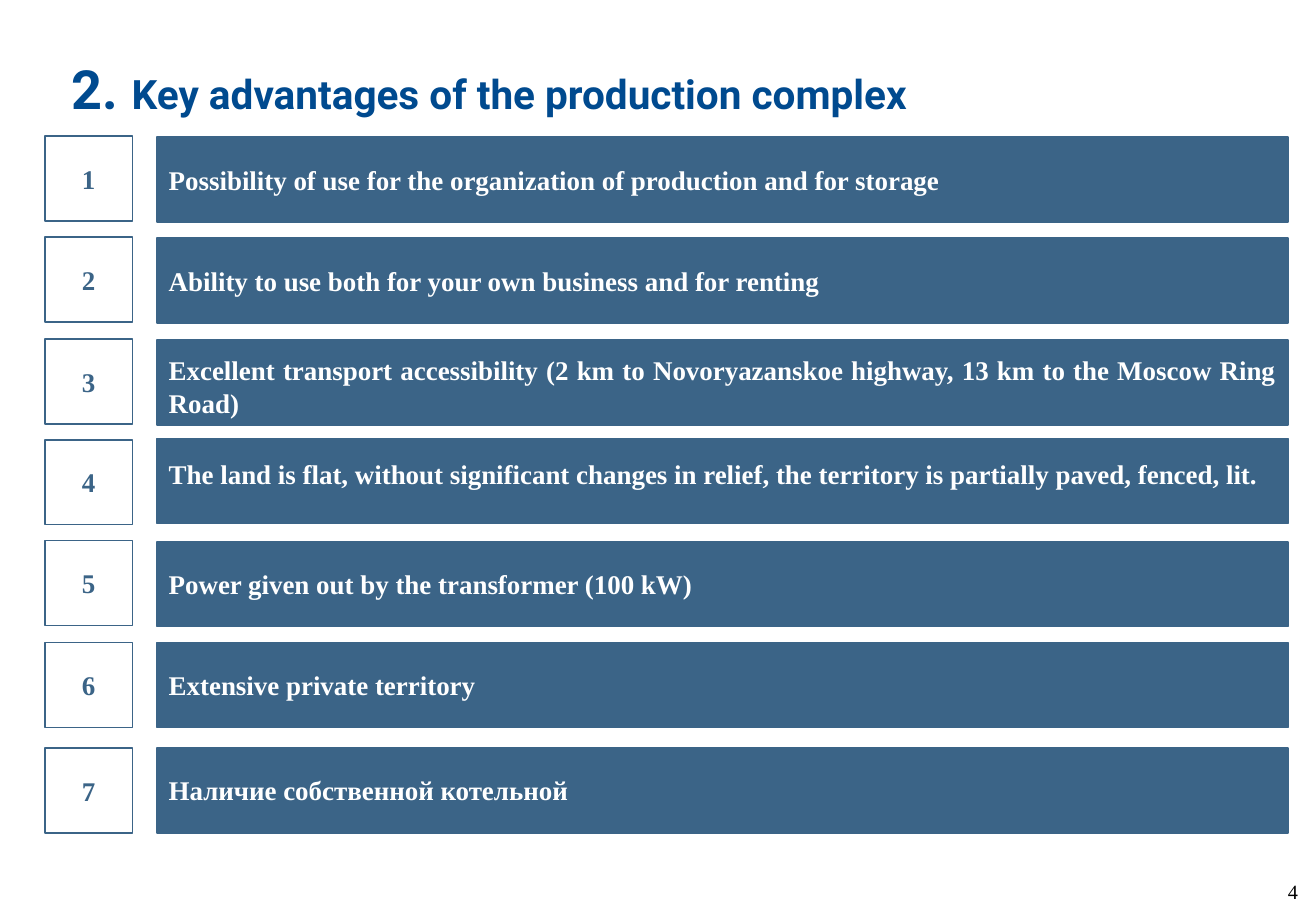
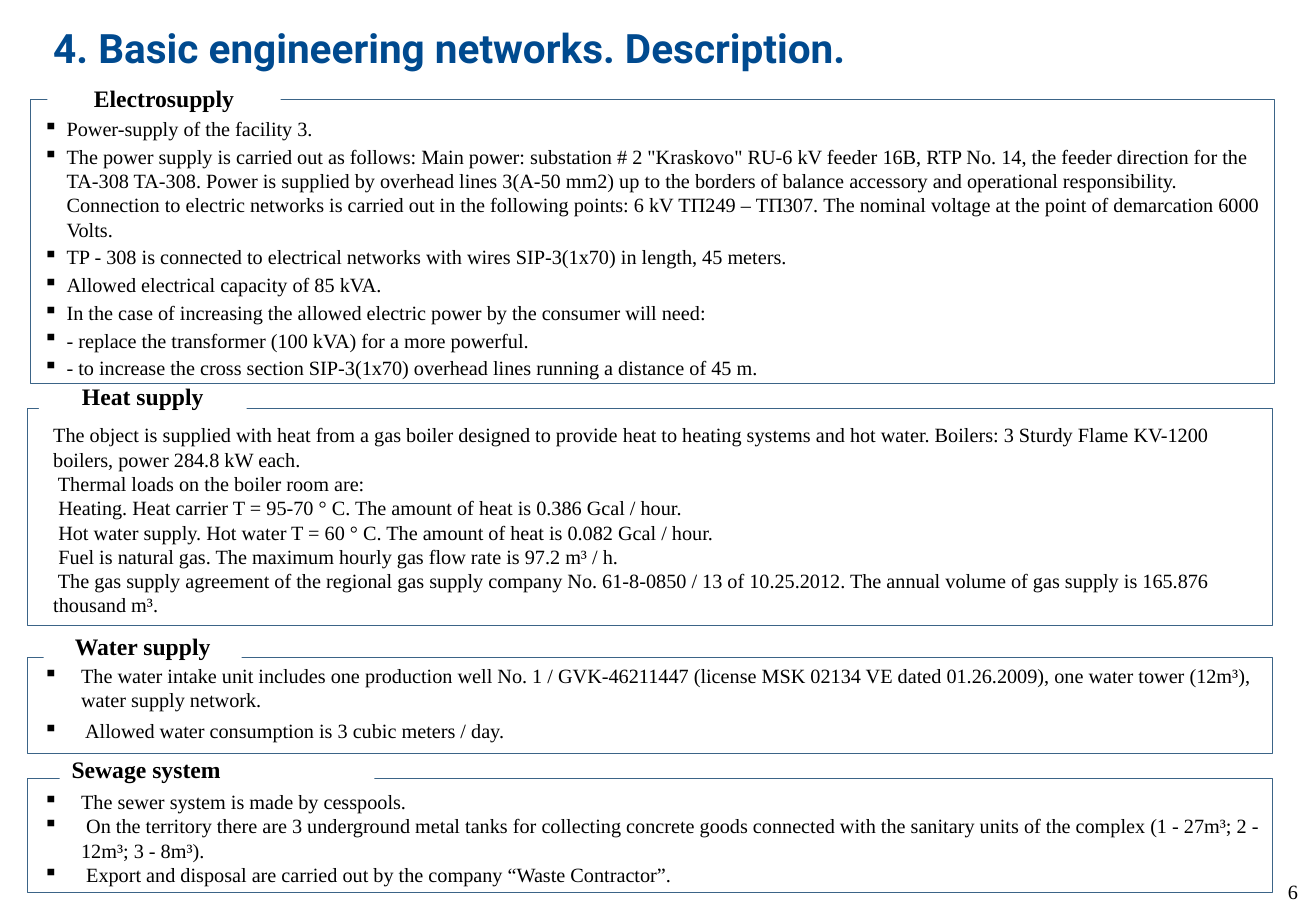
from dataclasses import dataclass

import pptx
import pptx.dml.color
import pptx.enum.shapes
import pptx.enum.text
import pptx.presentation
import pptx.shapes.autoshape
import pptx.slide
import pptx.text.text
import pptx.util
from lxml import etree
from pptx.oxml.ns import qn

EMU_PER_PX = 9144
STEEL = "3B6487"
NAVY = "004A8F"
WHITE = "FFFFFF"
BLACK = "000000"
SERIF = "Times New Roman"
SANS = "Roboto"
ALIGN = pptx.enum.text.PP_ALIGN
ANCHOR = pptx.enum.text.MSO_ANCHOR


@dataclass(frozen=True)
class Box:
    left: int
    top: int
    width: int
    height: int


@dataclass(frozen=True)
class TextStyle:
    size: int
    color: str = BLACK
    bold: bool = False
    align: ALIGN = ALIGN.LEFT
    name: str = SERIF


@dataclass(frozen=True)
class Advantage:
    text: str
    number_top: int
    bar_top: int
    text_shift: int = 0


@dataclass(frozen=True)
class Section:
    heading: str
    label: Box
    frame: Box
    body: Box
    paragraphs: tuple[str, ...]
    hanging: int = 0
    space_before: int = 0
    space_after: int = 0
    heading_align: ALIGN = ALIGN.CENTER


NUMBER_STYLE = TextStyle(16, STEEL, True, ALIGN.CENTER)
BAR_STYLE = TextStyle(16, WHITE, True, ALIGN.JUSTIFY)
BODY_STYLE = TextStyle(12)
PAGE_STYLE = TextStyle(12, align=ALIGN.RIGHT)

ADVANTAGES = (
    Advantage("Possibility of use for the organization of production and for storage", 112, 113),
    Advantage("Ability to use both for your own business and for renting", 195, 196),
    Advantage(
        "Excellent transport accessibility (2 km to Novoryazanskoe highway, 13 km to the Moscow Ring Road)",
        279, 280, 3,
    ),
    Advantage(
        "The land is flat, without significant changes in relief, the territory is partially paved, fenced, lit.",
        362, 361, -6,
    ),
    Advantage("Power given out by the transformer (100 kW)", 445, 446),
    Advantage("Extensive private territory", 529, 529),
    Advantage("Наличие собственной котельной", 616, 616, -1),
)

SECTIONS = (
    Section(
        "Electrosupply",
        Box(39, 64, 192, 34), Box(25, 82, 1024, 234), Box(26, 91, 1023, 229),
        (
            "Power-supply of the facility 3.",
            "The power supply is carried out as follows: Main power: substation # 2 \"Kraskovo\" RU-6 kV "
            "feeder 16B, RTP No. 14, the feeder direction for the TA-308 TA-308. Power is supplied by overhead "
            "lines 3(A-50 mm2) up to the borders of balance accessory and operational responsibility. "
            "Connection to electric networks is carried out in the following points: 6 kV ТП249 – ТП307. "
            "The nominal voltage at the point of demarcation 6000 Volts.",
            "TP - 308 is connected to electrical networks with wires SIP-3(1х70) in length, 45 meters.",
            "Allowed electrical capacity of 85 kVA.",
            "In the case of increasing the allowed electric power by the consumer will need:",
            "- replace the transformer (100 kVA) for a more powerful.",
            "- to increase the cross section SIP-3(1х70) overhead lines running a distance of 45 m.",
        ),
        hanging=19, space_before=2,
    ),
    Section(
        "Heat supply",
        Box(32, 309, 171, 34), Box(23, 336, 1024, 179), Box(34, 343, 1023, 172),
        (
            "The object is supplied with heat from a gas boiler designed to provide heat to heating systems "
            "and hot water. Boilers: 3 Sturdy Flame KV-1200 boilers, power 284.8 kW each.",
            " Thermal loads on the boiler room are:",
            " Heating. Heat carrier T = 95-70 ° C. The amount of heat is 0.386 Gcal / hour.",
            " Hot water supply. Hot water T = 60 ° C. The amount of heat is 0.082 Gcal / hour.",
            " Fuel is natural gas. The maximum hourly gas flow rate is 97.2 m³ / h.",
            " The gas supply agreement of the regional gas supply company No. 61-8-0850 / 13 of 10.25.2012. "
            "The annual volume of gas supply is 165.876 thousand m³.",
        ),
    ),
    Section(
        "Water supply",
        Box(36, 515, 163, 34), Box(23, 541, 1024, 79), Box(26, 541, 1023, 76),
        (
            "The water intake unit includes one production well No. 1 / GVK-46211447 (license MSK 02134 VE "
            "dated 01.26.2009), one water tower (12m³), water supply network.",
            " Allowed water consumption is 3 cubic meters / day.",
        ),
        hanging=31, space_before=2, space_after=2,
    ),
    Section(
        "Sewage system",
        Box(49, 616, 259, 34), Box(23, 641, 1024, 94), Box(26, 645, 1023, 91),
        (
            "The sewer system is made by cesspools.",
            " On the territory there are 3 underground metal tanks for collecting concrete goods connected "
            "with the sanitary units of the complex (1 - 27m³; 2 - 12m³; 3 - 8m³).",
            " Export and disposal are carried out by the company “Waste Contractor”.",
        ),
        hanging=31, heading_align=ALIGN.LEFT,
    ),
)


def px(length: int) -> pptx.util.Emu:
    return pptx.util.Emu(length * EMU_PER_PX)


def rgb(color: str) -> pptx.dml.color.RGBColor:
    return pptx.dml.color.RGBColor.from_string(color)


def place(box: Box) -> tuple[pptx.util.Emu, ...]:
    return px(box.left), px(box.top), px(box.width), px(box.height)


def style_paragraph(paragraph: pptx.text.text._Paragraph, style: TextStyle) -> None:
    paragraph.alignment = style.align
    paragraph.font.name = style.name
    paragraph.font.size = pptx.util.Pt(style.size)
    paragraph.font.bold = style.bold
    paragraph.font.color.rgb = rgb(style.color)


def set_text(shape: pptx.shapes.autoshape.Shape, text: str, style: TextStyle) -> None:
    paragraph = shape.text_frame.paragraphs[0]
    paragraph.text = text
    style_paragraph(paragraph, style)


def add_bullet(paragraph: pptx.text.text._Paragraph, hanging: int) -> None:
    properties = paragraph._p.get_or_add_pPr()
    properties.set("marL", str(px(hanging)))
    properties.set("indent", str(px(-hanging)))
    etree.SubElement(properties, qn("a:buChar")).set("char", "▪")


def add_text_box(slide: pptx.slide.Slide, box: Box) -> pptx.shapes.autoshape.Shape:
    shape = slide.shapes.add_textbox(*place(box))
    shape.text_frame.word_wrap = True
    return shape


def add_rectangle(
    slide: pptx.slide.Slide, box: Box, fill: str = "", line: str = "", line_width: float = 1
) -> pptx.shapes.autoshape.Shape:
    shape = slide.shapes.add_shape(pptx.enum.shapes.MSO_SHAPE.RECTANGLE, *place(box))
    shape.shadow.inherit = False
    if fill:
        shape.fill.solid()
        shape.fill.fore_color.rgb = rgb(fill)
    else:
        shape.fill.background()
    if line:
        shape.line.color.rgb = rgb(line)
        shape.line.width = pptx.util.Pt(line_width)
    else:
        shape.line.fill.background()
    return shape


def add_title(slide: pptx.slide.Slide, box: Box, parts: tuple[tuple[str, int], ...]) -> None:
    paragraph = add_text_box(slide, box).text_frame.paragraphs[0]
    style_paragraph(paragraph, TextStyle(24, NAVY, True, name=SANS))
    for text, size in parts:
        run = paragraph.add_run()
        run.text = text
        run.font.size = pptx.util.Pt(size)


def add_page(presentation: pptx.presentation.Presentation, number: int) -> pptx.slide.Slide:
    slide = presentation.slides.add_slide(presentation.slide_layouts[6])
    set_text(add_text_box(slide, Box(1033, 719, 45, 31)), str(number), PAGE_STYLE)
    return slide


def add_advantage(slide: pptx.slide.Slide, number: int, advantage: Advantage) -> None:
    square = add_rectangle(slide, Box(37, advantage.number_top, 72, 70), line=STEEL)
    square.text_frame.word_wrap = False
    set_text(square, str(number), NUMBER_STYLE)
    bar = add_rectangle(slide, Box(129, advantage.bar_top, 931, 70), STEEL, STEEL)
    bar.text_frame.vertical_anchor = ANCHOR.MIDDLE
    bar.text_frame.margin_top = px(6 + advantage.text_shift)
    bar.text_frame.margin_bottom = px(6 - advantage.text_shift)
    set_text(bar, advantage.text, BAR_STYLE)


def add_section(slide: pptx.slide.Slide, section: Section) -> None:
    add_rectangle(slide, section.frame, line=STEEL, line_width=0.5)
    label = add_rectangle(slide, section.label, WHITE)
    set_text(label, section.heading, TextStyle(14, bold=True, align=section.heading_align))
    text_frame = add_text_box(slide, section.body).text_frame
    for index, text in enumerate(section.paragraphs):
        paragraph = text_frame.add_paragraph() if index else text_frame.paragraphs[0]
        paragraph.text = text
        if section.hanging:
            add_bullet(paragraph, section.hanging)
        paragraph.space_before = pptx.util.Pt(section.space_before if index else 0)
        paragraph.space_after = pptx.util.Pt(section.space_after)
        style_paragraph(paragraph, BODY_STYLE)


def build_advantages(presentation: pptx.presentation.Presentation) -> None:
    slide = add_page(presentation, 4)
    add_title(
        slide, Box(49, 41, 997, 54),
        (("2. ", 32), ("Key advantages of the production complex", 24)),
    )
    for number, advantage in enumerate(ADVANTAGES, start=1):
        add_advantage(slide, number, advantage)


def build_networks(presentation: pptx.presentation.Presentation) -> None:
    slide = add_page(presentation, 6)
    for section in reversed(SECTIONS):
        add_section(slide, section)
    add_title(slide, Box(34, 14, 997, 54), (("4. Basic engineering networks. Description.", 24),))


def main() -> None:
    presentation = pptx.Presentation()
    presentation.slide_width = px(1083)
    presentation.slide_height = px(750)
    build_advantages(presentation)
    build_networks(presentation)
    presentation.save("out.pptx")


if __name__ == "__main__":
    main()
